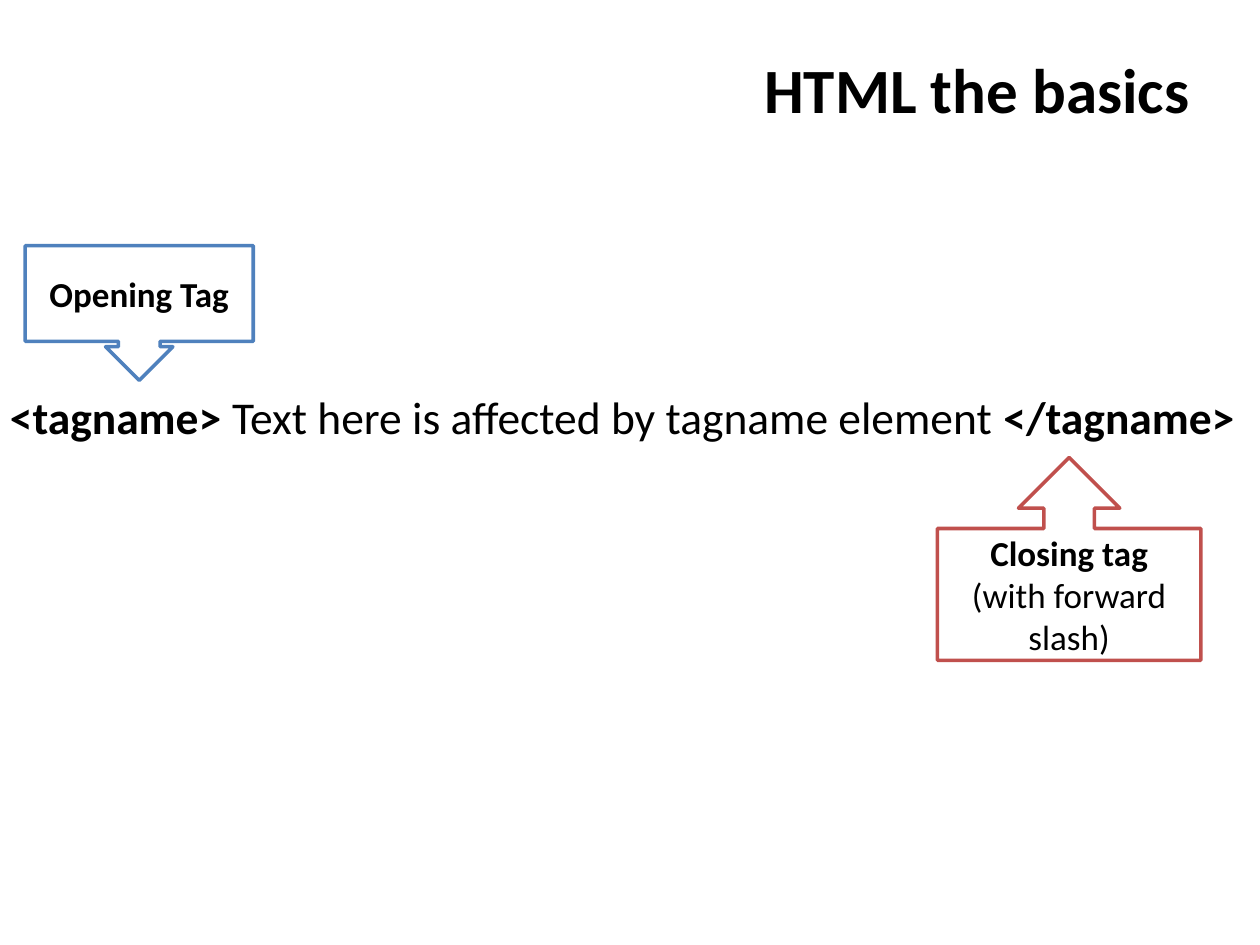
"""Build the "HTML the basics" slide: one tagged line with two callouts."""
from pptx import Presentation
from pptx.dml.color import RGBColor
from pptx.enum.shapes import MSO_SHAPE
from pptx.enum.text import MSO_ANCHOR, PP_ALIGN
from pptx.util import Pt

DOWN, UP = MSO_SHAPE.DOWN_ARROW_CALLOUT, MSO_SHAPE.UP_ARROW_CALLOUT
LEFT, CENTER, RIGHT = PP_ALIGN.LEFT, PP_ALIGN.CENTER, PP_ALIGN.RIGHT
TOP, MIDDLE = MSO_ANCHOR.TOP, MSO_ANCHOR.MIDDLE

THEME = {
    "font": "Calibri", "text": "000000", "fill": "FFFFFF",
    "opening": "4F81BD", "closing": "C0504D",
    "title": 36, "body": 26, "label": 20, "line": 2,
}

TEXTS = [
    {"box": (191.5, 22.3, 495.4, 56.2), "size": "title", "align": RIGHT, "anchor": MIDDLE,
     "runs": [("HTML the basics", True)]},
    {"box": (-1.4, 218.9, 720, 38.9), "size": "body", "align": LEFT, "anchor": TOP,
     "runs": [("<tagname> ", True),
              ("Text here is affected by tagname element ", False),
              ("</tagname>", True)]},
]
CALLOUTS = [
    {"box": (14.4, 140.4, 130.3, 77), "shape": DOWN, "color": "opening",
     "adjust": (0.31, 0.25, 0.25, 0.71), "runs": [("Opening Tag", True)]},
    {"box": (535.7, 261.4, 150.5, 115.9), "shape": UP, "color": "closing",
     "adjust": (), "runs": [("Closing tag ", True), ("(with forward slash)", False)]},
]


def rgb(name):
    return RGBColor.from_string(THEME[name])


def write(sp, runs, size, align, anchor):
    tf = sp.text_frame
    tf.word_wrap = True
    tf.vertical_anchor = anchor
    p = tf.paragraphs[0]
    p.alignment = align
    for text, bold in runs:
        r = p.add_run()
        r.text = text
        r.font.name = THEME["font"]
        r.font.size = Pt(THEME[size])
        r.font.bold = bold
        r.font.color.rgb = rgb("text")


def add_text(s, item):
    sp = s.shapes.add_textbox(*map(Pt, item["box"]))
    write(sp, item["runs"], item["size"], item["align"], item["anchor"])


def add_callout(s, item):
    sp = s.shapes.add_shape(item["shape"], *map(Pt, item["box"]))
    for i, value in enumerate(item["adjust"]):
        sp.adjustments[i] = value
    sp.shadow.inherit = False
    sp.fill.solid()
    sp.fill.fore_color.rgb = rgb("fill")
    sp.line.color.rgb = rgb(item["color"])
    sp.line.width = Pt(THEME["line"])
    write(sp, item["runs"], "label", CENTER, MIDDLE)


def main():
    prs = Presentation()
    prs.slide_width, prs.slide_height = Pt(720), Pt(540)
    s = prs.slides.add_slide(prs.slide_layouts[6])
    for item in TEXTS:
        add_text(s, item)
    for item in CALLOUTS:
        add_callout(s, item)
    prs.save("out.pptx")


if __name__ == "__main__":
    main()
